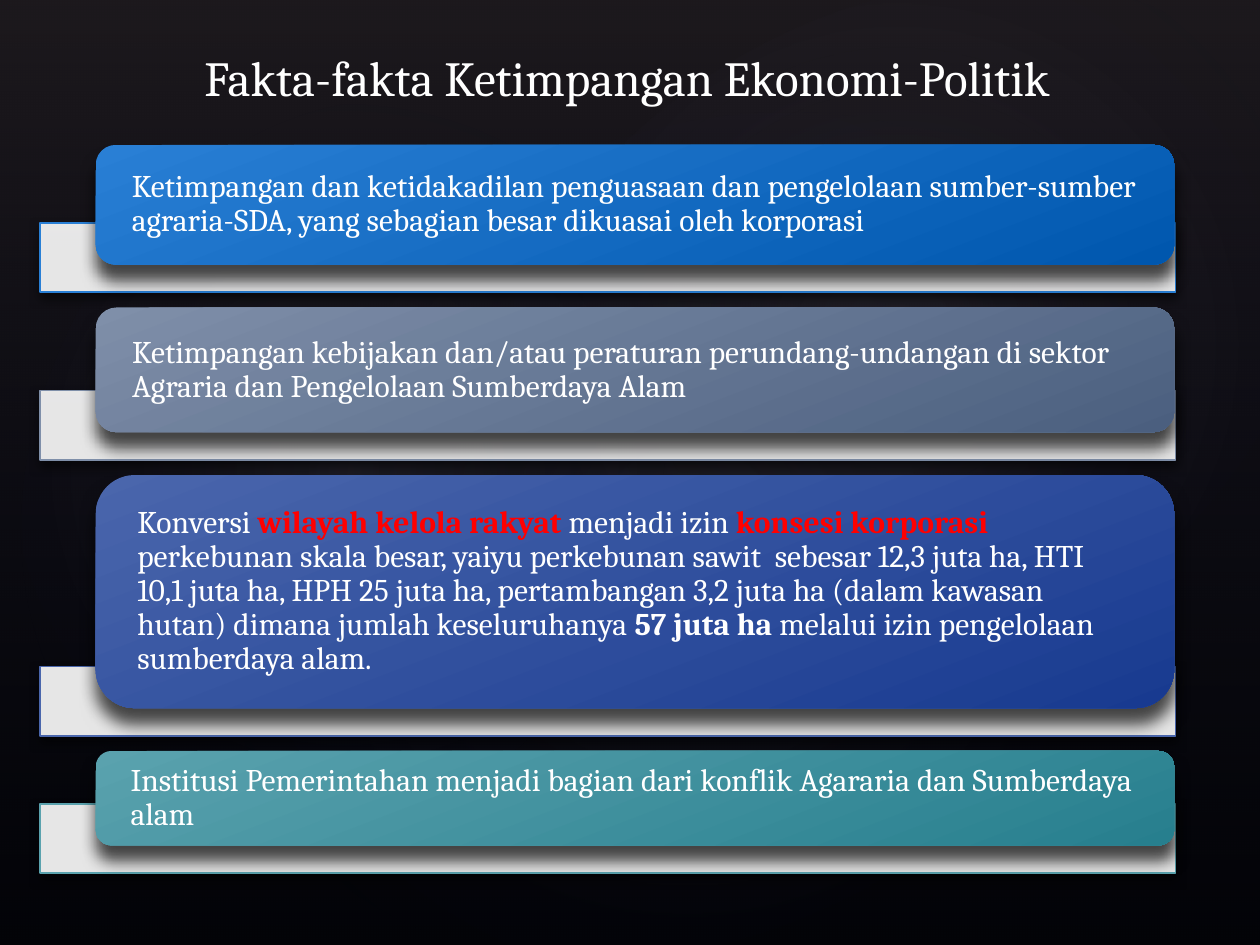
from dataclasses import dataclass

from pptx import Presentation
from pptx.dml.color import RGBColor
from pptx.enum.shapes import MSO_SHAPE as Preset
from pptx.enum.text import MSO_ANCHOR as Anchor, MSO_AUTO_SIZE as AutoSize, PP_ALIGN as Align
from pptx.oxml import parse_xml
from pptx.oxml.ns import nsdecls, qn
from pptx.util import Inches, Pt

COLORS = {
    "black": "000000",
    "white": "FFFFFF",
    "red": "FF0000",
    "glow": "C4BCC6",
    "night": "242852",
    "dusk": "504652",
}
FONT = "Cambria"
RAIL_LEFT, RAIL_WIDTH, RAIL_HEIGHT = 0.32, 9.01, 0.55
CARD_LEFT, CARD_WIDTH = 0.76, 8.56
FIRST_TOP, OVERLAP, GAP = 1.15, 0.33, 0.12


@dataclass
class Phrase:
    text: str
    color: str = "white"
    bold: bool = False


@dataclass
class Fact:
    height: float
    start: str
    end: str
    phrases: list[Phrase]


@dataclass
class Glow:
    left: float
    top: float
    width: float
    height: float
    rotation: float
    opacity: int


FACTS = [
    Fact(0.95, "297FD5", "0057AE", [
        Phrase("Ketimpangan dan ketidakadilan penguasaan dan pengelolaan sumber-sumber "
               "agraria-SDA, yang sebagian besar dikuasai oleh korporasi")]),
    Fact(0.99, "7F8FA9", "4B5F7F", [
        Phrase("Ketimpangan kebijakan dan/atau peraturan perundang-undangan di sektor "
               "Agraria dan Pengelolaan Sumberdaya Alam")]),
    Fact(1.85, "4A66AC", "183A90", [
        Phrase("Konversi "),
        Phrase("wilayah kelola rakyat", "red", True),
        Phrase(" menjadi izin "),
        Phrase("konsesi korporasi ", "red", True),
        Phrase("perkebunan skala besar, yaiyu perkebunan sawit  sebesar 12,3 juta ha, "
               "HTI 10,1 juta ha, HPH 25 juta ha, pertambangan 3,2 juta ha (dalam kawasan "
               "hutan) dimana jumlah keseluruhanya "),
        Phrase("57 juta ha ", bold=True),
        Phrase("melalui izin pengelolaan sumberdaya alam.")]),
    Fact(0.75, "5AA2AE", "277F8E", [
        Phrase("Institusi Pemerintahan menjadi bagian dari konflik Agararia dan "
               "Sumberdaya alam")]),
]
GLOWS = [
    Glow(1.5, 1.14, 7.92, 6.24, 328.7, 7),
    Glow(-0.3, 1.28, 6.06, 4.9, 294.3, 8),
    Glow(3.58, 0.13, 7.09, 5.2, 328.7, 8),
]


def color_xml(color: str, opacity: int) -> str:
    return f'<a:srgbClr val="{color}"><a:alpha val="{opacity * 1000}"/></a:srgbClr>'


def set_gradient(shape, stops: list[tuple[int, str, int]], angle: int | None = None) -> None:
    """Fill with (position, color, opacity) stops, radially when no angle is given."""
    stop_xml = "".join(f'<a:gs pos="{position * 1000}">{color_xml(color, opacity)}</a:gs>'
                       for position, color, opacity in stops)
    if angle is None:
        direction = ('<a:path path="circle"><a:fillToRect l="50000" t="50000" '
                     'r="50000" b="50000"/></a:path>')
    else:
        direction = f'<a:lin ang="{angle * 60000}" scaled="0"/>'
    shape.fill.background()
    properties = shape._element.spPr
    properties.replace(properties.find(qn("a:noFill")), parse_xml(
        f'<a:gradFill {nsdecls("a")} rotWithShape="1"><a:gsLst>{stop_xml}</a:gsLst>'
        f'{direction}</a:gradFill>'))


def set_shadow(shape, opacity: int, blur: int, distance: int) -> None:
    effects = shape._element.spPr.find(qn("a:effectLst"))
    effects.append(parse_xml(
        f'<a:outerShdw {nsdecls("a")} blurRad="{Pt(blur)}" dist="{Pt(distance)}" '
        f'dir="5400000" rotWithShape="0">{color_xml(COLORS["black"], opacity)}</a:outerShdw>'))


def add_plain_shape(slide, preset: Preset, left: float, top: float, width: float, height: float):
    """Add a shape without line or shadow."""
    shape = slide.shapes.add_shape(preset, Inches(left), Inches(top),
                                   Inches(width), Inches(height))
    shape.line.fill.background()
    shape.shadow.inherit = False
    return shape


def add_run(paragraph, phrase: Phrase, size: int) -> None:
    run = paragraph.add_run()
    run.text = phrase.text
    run.font.name = FONT
    run.font.size = Pt(size)
    run.font.bold = phrase.bold
    run.font.color.rgb = RGBColor.from_string(COLORS[phrase.color])


def add_backdrop(slide) -> None:
    slide.background.fill.solid()
    slide.background.fill.fore_color.rgb = RGBColor.from_string(COLORS["black"])
    veil = add_plain_shape(slide, Preset.RECTANGLE, 0, 0, 10, 7.5)
    set_gradient(veil, [(0, COLORS["dusk"], 36), (100, COLORS["night"], 10)], 90)
    for glow in GLOWS:
        ellipse = add_plain_shape(slide, Preset.OVAL, glow.left, glow.top,
                                  glow.width, glow.height)
        ellipse.rotation = glow.rotation
        set_gradient(ellipse, [(0, COLORS["glow"], glow.opacity), (58, COLORS["night"], 0)])


def add_rail(slide, fact: Fact, top: float) -> None:
    rail = add_plain_shape(slide, Preset.RECTANGLE, RAIL_LEFT, top, RAIL_WIDTH, RAIL_HEIGHT)
    set_gradient(rail, [(0, COLORS["white"], 90), (100, COLORS["white"], 90)], 90)
    rail.line.color.rgb = RGBColor.from_string(fact.start)
    rail.line.width = Pt(1)
    set_shadow(rail, 60, 6, 3)


def add_card(slide, fact: Fact, top: float) -> None:
    card = add_plain_shape(slide, Preset.ROUNDED_RECTANGLE, CARD_LEFT, top,
                           CARD_WIDTH, fact.height)
    set_gradient(card, [(0, fact.start, 100), (100, fact.end, 100)], 69)
    set_shadow(card, 70, 9, 9)
    frame = card.text_frame
    frame.word_wrap = True
    frame.vertical_anchor = Anchor.MIDDLE
    frame.margin_left = frame.margin_right = Inches(0.24)
    frame.margin_top = frame.margin_bottom = 0
    paragraph = frame.paragraphs[0]
    paragraph.alignment = Align.LEFT
    paragraph.line_spacing = 0.9
    for phrase in fact.phrases:
        add_run(paragraph, phrase, 18)


def set_title(slide, text: str) -> None:
    title = slide.shapes.title
    title.left, title.top = Inches(0.85), Inches(0.33)
    title.width, title.height = Inches(8.25), Inches(1)
    frame = title.text_frame
    frame.auto_size = AutoSize.NONE
    frame.vertical_anchor = Anchor.TOP
    frame.paragraphs[0].alignment = Align.CENTER
    add_run(frame.paragraphs[0], Phrase(text), 28)
    title._element.getparent().append(title._element)  # bring to front


def main() -> None:
    presentation = Presentation()
    presentation.slide_width, presentation.slide_height = Inches(10), Inches(7.5)
    slide = presentation.slides.add_slide(presentation.slide_layouts[5])
    add_backdrop(slide)
    top = FIRST_TOP
    for fact in FACTS:
        rail_top = top + fact.height - OVERLAP
        add_rail(slide, fact, rail_top)
        add_card(slide, fact, top)
        top = rail_top + RAIL_HEIGHT + GAP
    set_title(slide, "Fakta-fakta Ketimpangan Ekonomi-Politik")
    presentation.save("out.pptx")


if __name__ == "__main__":
    main()
